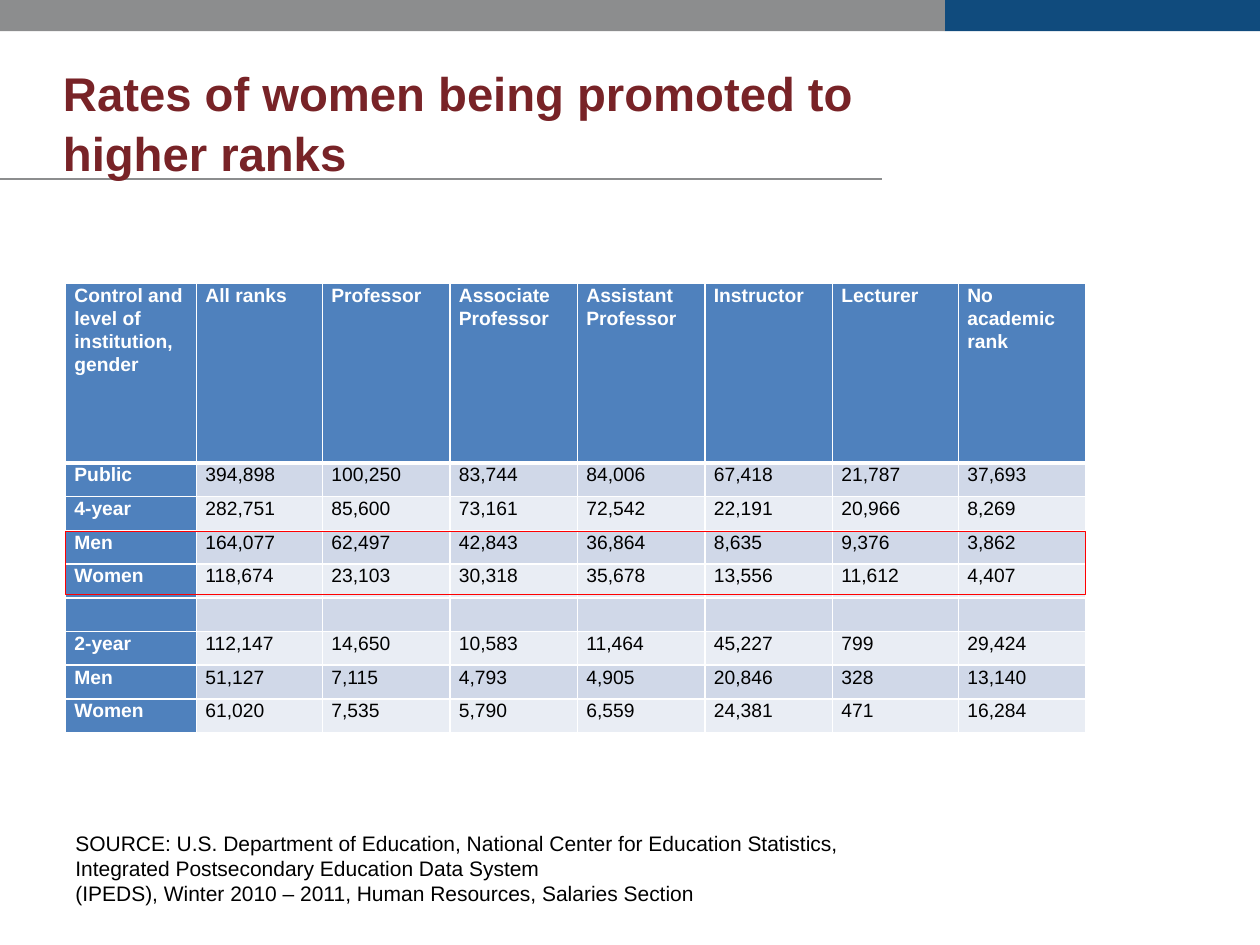
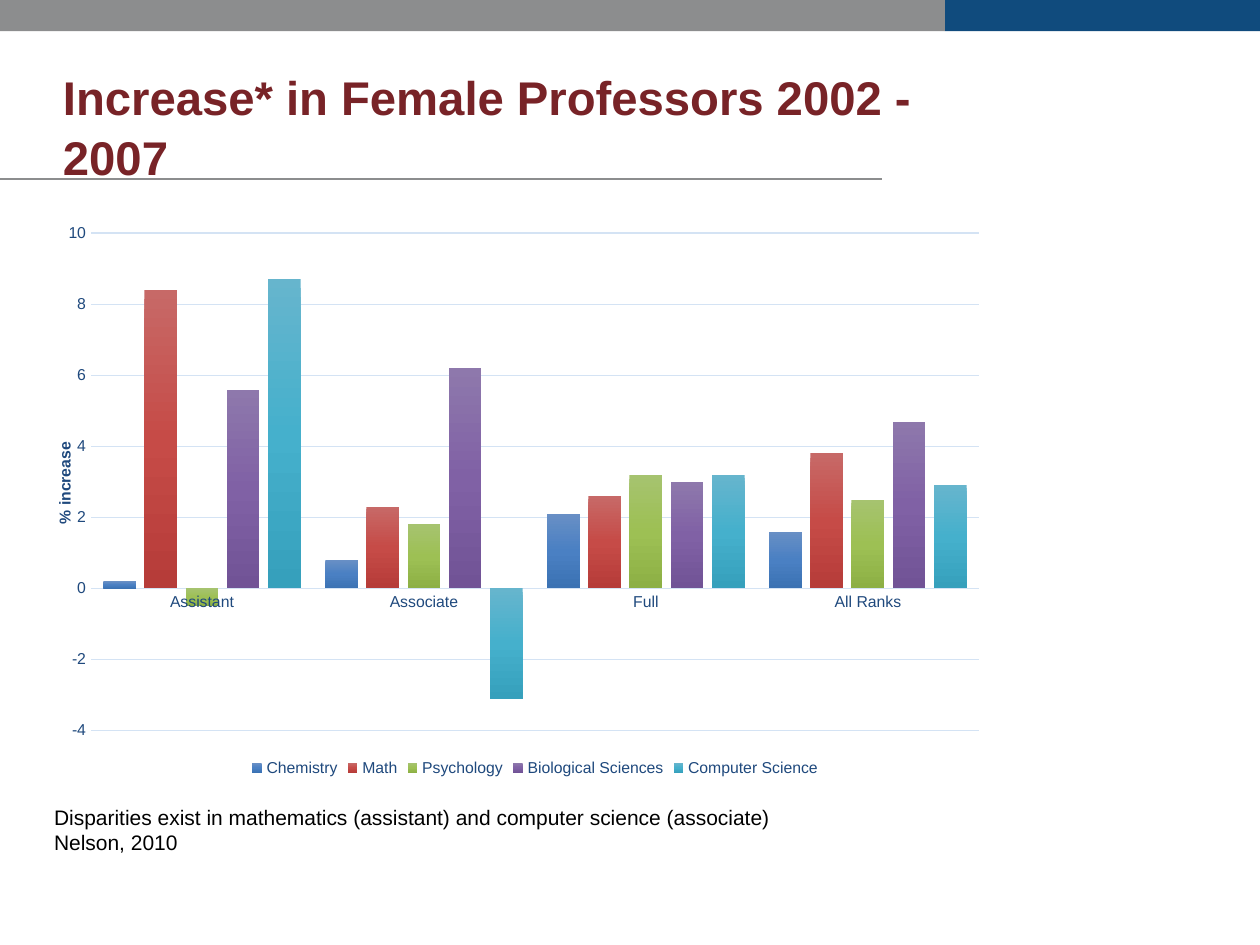
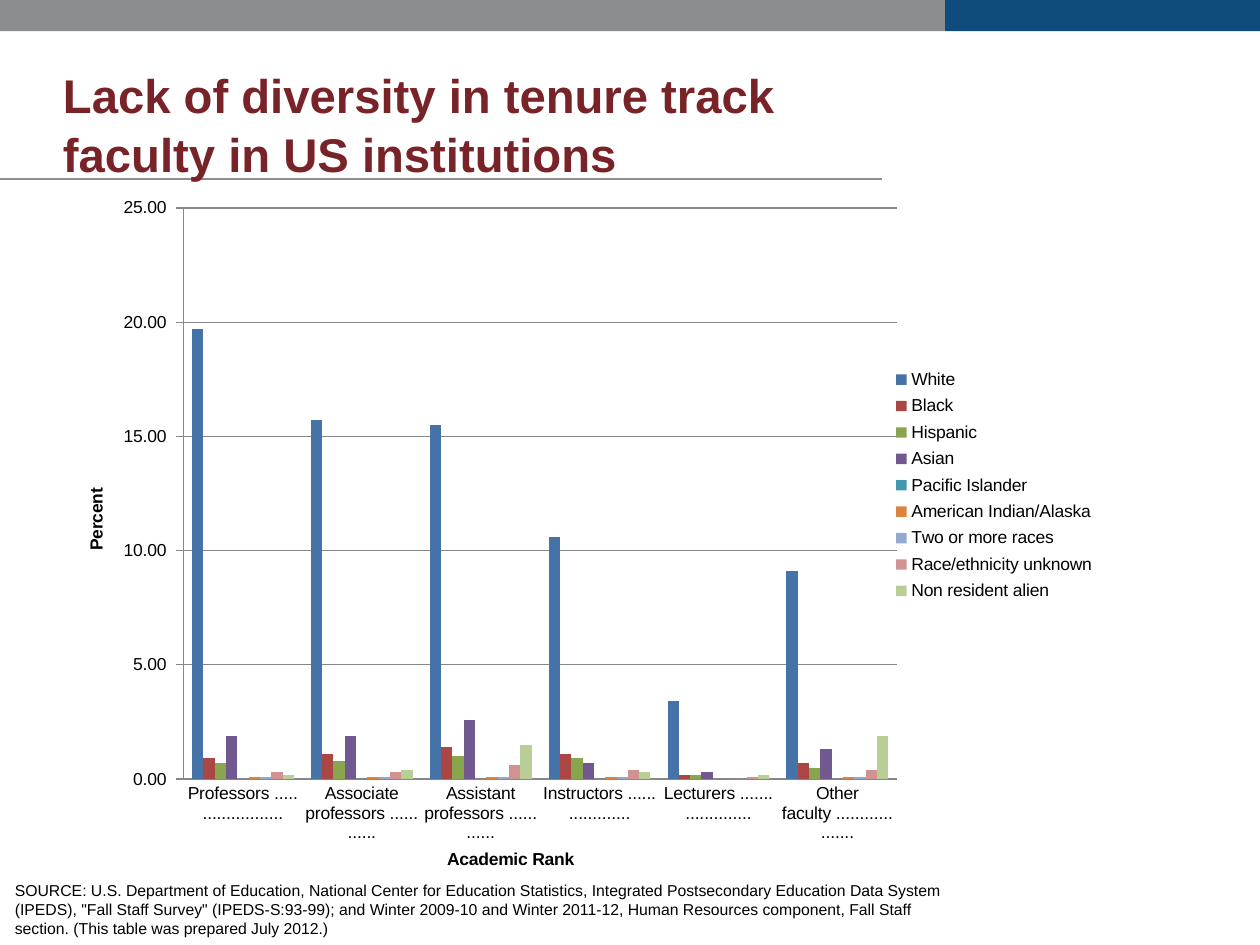
"""Builds three slides on the gender and diversity of university faculty."""
import copy
import dataclasses

import lxml.etree
import pptx
import pptx.chart.data
import pptx.dml.color
import pptx.enum.chart
import pptx.enum.shapes
import pptx.oxml
import pptx.oxml.ns
import pptx.util

Cm = pptx.util.Cm
Pt = pptx.util.Pt
qn = pptx.oxml.ns.qn


@dataclasses.dataclass(frozen=True)
class Theme:
    """Colours and type sizes shared by the slides."""
    font: str = "Arial"
    title: str = "782327"
    text: str = "000000"
    white: str = "FFFFFF"
    grey: str = "8C8D8E"
    navy: str = "104B7D"
    header: str = "4F81BD"
    bands: tuple = ("D0D8E8", "E9EDF4")
    highlight: str = "FF0000"
    title_size: int = 27
    note_size: int = 12
    source_size: int = 9
    table_size: int = 11


@dataclasses.dataclass(frozen=True)
class Box:
    """A region of a slide, in centimetres."""
    left: float
    top: float
    width: float
    height: float

    def lengths(self):
        """Return the position and size as lengths."""
        return [Cm(value) for value in dataclasses.astuple(self)]

    def inner(self, left, top, width, height):
        """Return a region placed relative to this one."""
        return Box(self.left + left, self.top + top, width, height)


@dataclasses.dataclass(frozen=True)
class ChartStyle:
    """The look and scale of a column chart."""
    colours: tuple
    text: str
    size: int
    grid: str
    axis_line: str | None
    tick: object
    scale: tuple
    number_format: str
    gap: int
    overlap: int
    plot: tuple
    value_title: tuple
    legend: object
    category_title: tuple | None = None
    legend_layout: tuple | None = None


THEME = Theme()
PAGE = Box(0, 0, 25.4, 19.05)

RANKS = ["Control and level of institution, gender", "All ranks", "Professor", "Associate Professor",
         "Assistant Professor", "Instructor", "Lecturer", "No academic rank"]
STAFF = [
    ["Public", "394,898", "100,250", "83,744", "84,006", "67,418", "21,787", "37,693"],
    ["4-year", "282,751", "85,600", "73,161", "72,542", "22,191", "20,966", "8,269"],
    ["Men", "164,077", "62,497", "42,843", "36,864", "8,635", "9,376", "3,862"],
    ["Women", "118,674", "23,103", "30,318", "35,678", "13,556", "11,612", "4,407"],
    [""] * 8,
    ["2-year", "112,147", "14,650", "10,583", "11,464", "45,227", "799", "29,424"],
    ["Men", "51,127", "7,115", "4,793", "4,905", "20,846", "328", "13,140"],
    ["Women", "61,020", "7,535", "5,790", "6,559", "24,381", "471", "16,284"],
]
COLUMN_WIDTHS = [2.64, 2.54, 2.57, 2.57, 2.57, 2.57, 2.54, 2.57]
HEADER_HEIGHT, ROW_HEIGHT = 3.61, 0.68

INCREASES = {
    "Chemistry": (0.2, 0.8, 2.1, 1.6),
    "Math": (8.4, 2.3, 2.6, 3.8),
    "Psychology": (-0.5, 1.8, 3.2, 2.5),
    "Biological Sciences": (5.6, 6.2, 3, 4.7),
    "Computer Science": (8.7, -3.1, 3.2, 2.9),
}
INCREASE_STYLE = ChartStyle(
    colours=(("688FC5", "4A80C3", "3B72B3"), ("C76967", "C64B47", "B63C39"),
             ("A6C36F", "9DC054", "8DB045"), ("8E78AC", "8061A5", "715396"),
             ("66B5CD", "45B0CC", "36A0BC")),
    text="1F497D", size=9, grid="D4E3F4", axis_line=None,
    tick=pptx.enum.chart.XL_TICK_MARK.NONE, scale=(-4, 10, 2), number_format="General",
    gap=75, overlap=-25, plot=(0.05, 0.04, 0.9, 0.87),
    value_title=("% increase", 0.01, 0.4), legend=pptx.enum.chart.XL_LEGEND_POSITION.BOTTOM)

DIVERSITY_RANKS = ["Professors ......................", "Associate professors ............",
                   "Assistant professors ............", "Instructors ...................",
                   "Lecturers .....................", "Other faculty ..................."]
DIVERSITY = {
    "White": (19.7, 15.7, 15.5, 10.6, 3.4, 9.1),
    "Black": (0.9, 1.1, 1.4, 1.1, 0.2, 0.7),
    "Hispanic": (0.7, 0.8, 1, 0.9, 0.2, 0.5),
    "Asian": (1.9, 1.9, 2.6, 0.7, 0.3, 1.3),
    "Pacific Islander": (0, 0, 0, 0, 0, 0),
    "American Indian/Alaska": (0.1, 0.1, 0.1, 0.1, 0, 0.1),
    "Two or more races": (0.1, 0.1, 0.1, 0.1, 0, 0.1),
    "Race/ethnicity unknown": (0.3, 0.3, 0.6, 0.4, 0.1, 0.4),
    "Non resident alien": (0.2, 0.4, 1.5, 0.3, 0.2, 1.9),
}
DIVERSITY_STYLE = ChartStyle(
    colours=tuple((colour,) for colour in (
        "4572A7", "AA4643", "89A54E", "71588F", "4198AF", "DB843D", "93A9CF", "D19392", "B9CD96")),
    text=THEME.text, size=10, grid="878787", axis_line="878787",
    tick=pptx.enum.chart.XL_TICK_MARK.OUTSIDE, scale=(0, 25, 5),
    number_format=r"#,##0.00_);\(#,##0.00\)",
    gap=150, overlap=0, plot=(0.19, 0.19, 0.63, 0.7),
    value_title=("Percent", 0.1, 0.53), legend=pptx.enum.chart.XL_LEGEND_POSITION.RIGHT,
    category_title=("Academic Rank", 0.42, 0.97), legend_layout=(0.82, 0.38, 0.18, 0.3))


def rgb(colour):
    """Return a colour object for a hex string."""
    return pptx.dml.color.RGBColor.from_string(colour)


def set_font(font, size, colour, bold=False):
    """Apply the theme font with a size, colour and weight."""
    font.name, font.size, font.bold = THEME.font, Pt(size), bold
    font.color.rgb = rgb(colour)


def add_text(slide, box, lines, size, colour, bold=False, margins=(0.25, 0.13), spacing=1.0):
    """Add a wrapped text box with one paragraph for each line."""
    text_frame = slide.shapes.add_textbox(*box.lengths()).text_frame
    text_frame.word_wrap = True
    text_frame.margin_left = text_frame.margin_right = Cm(margins[0])
    text_frame.margin_top = text_frame.margin_bottom = Cm(margins[1])
    text_frame.text = "\n".join(lines)
    for paragraph in text_frame.paragraphs:
        paragraph.line_spacing = spacing
        for run in paragraph.runs:
            set_font(run.font, size, colour, bold)


def add_rectangle(slide, box, fill=None, line=None):
    """Add a flat rectangle with an optional fill and outline."""
    shape = slide.shapes.add_shape(pptx.enum.shapes.MSO_SHAPE.RECTANGLE, *box.lengths())
    shape.shadow.inherit = False
    if fill:
        shape.fill.solid()
        shape.fill.fore_color.rgb = rgb(fill)
    else:
        shape.fill.background()
    if line:
        shape.line.color.rgb = rgb(line)
        shape.line.width = Pt(0.75)
    else:
        shape.line.fill.background()


def add_frame(slide, page):
    """Draw the top bands and the rule under the title."""
    split = page.width * 0.75
    rule_top = page.top + 3.61
    rule = slide.shapes.add_connector(
        pptx.enum.shapes.MSO_CONNECTOR.STRAIGHT,
        Cm(page.left), Cm(rule_top), Cm(page.left + page.width * 0.7), Cm(rule_top))
    rule.line.color.rgb = rgb(THEME.grey)
    rule.line.width = Pt(0.75)
    lxml.etree.SubElement(rule._element.spPr, qn("a:effectLst"))
    add_rectangle(slide, page.inner(split, 0, page.width - split, 0.63), THEME.navy)
    add_rectangle(slide, page.inner(0, 0, split, 0.63), THEME.grey)


def add_slide(presentation, title, title_box):
    """Add a blank slide with the shared frame and a title."""
    slide = presentation.slides.add_slide(presentation.slide_layouts[6])
    add_frame(slide, PAGE)
    add_text(slide, title_box, [title], THEME.title_size, THEME.title, True, (0, 0), 1.05)
    return slide


def set_borders(cell, top, bottom):
    """Give a cell white borders with the given top and bottom widths."""
    properties = cell._tc.get_or_add_tcPr()
    for side, width in (("L", 1), ("R", 1), ("T", top), ("B", bottom)):
        line = lxml.etree.SubElement(properties, qn(f"a:ln{side}"), w=str(Pt(width)))
        fill = lxml.etree.SubElement(line, qn("a:solidFill"))
        lxml.etree.SubElement(fill, qn("a:srgbClr"), val=THEME.white)


def fill_cell(cell, text, row, column):
    """Write and format one cell of the staff table."""
    heading = row == 0 or column == 0
    set_borders(cell, 3 if row == 1 else 1, 3 if row == 0 else 1)
    cell.fill.solid()
    cell.fill.fore_color.rgb = rgb(THEME.header if heading else THEME.bands[(row - 1) % 2])
    cell.margin_left = cell.margin_right = Cm(0.18)
    cell.margin_top = cell.margin_bottom = 0
    cell.text_frame.text = text
    paragraph = cell.text_frame.paragraphs[0]
    paragraph.line_spacing = 1.07
    for run in paragraph.runs:
        set_font(run.font, THEME.table_size, THEME.white if heading else THEME.text, heading)
    if not text:
        paragraph._p.get_or_add_endParaRPr().set("sz", str(THEME.table_size * 100))


def add_staff_table(slide, box):
    """Add the staff table and outline its four-year gender rows."""
    rows = [RANKS] + STAFF
    table = slide.shapes.add_table(len(rows), len(RANKS), *box.lengths()).table
    for column, width in zip(table.columns, COLUMN_WIDTHS):
        column.width = Cm(width)
    for index, values in enumerate(rows):
        table.rows[index].height = Cm(ROW_HEIGHT if index else HEADER_HEIGHT)
        for column, text in enumerate(values):
            fill_cell(table.cell(index, column), text, index, column)
    outline = box.inner(0, HEADER_HEIGHT + 2 * ROW_HEIGHT + 0.03, box.width, 1.27)
    add_rectangle(slide, outline, line=THEME.highlight)


def set_layout(element, index, position, inner=False):
    """Place a chart part by fractions of the chart area."""
    for old in element.findall(qn("c:layout")):
        element.remove(old)
    layout = lxml.etree.Element(qn("c:layout"))
    manual = lxml.etree.SubElement(layout, qn("c:manualLayout"))
    settings = [("layoutTarget", "inner")] if inner else []
    settings += [("xMode", "edge"), ("yMode", "edge")]
    settings += zip("xywh", position)
    for name, value in settings:
        lxml.etree.SubElement(manual, qn(f"c:{name}"), val=str(value))
    element.insert(index, layout)


def set_axis_title(axis, title, style, rotation):
    """Write, turn and place the title of an axis."""
    text, *position = title
    text_frame = axis.axis_title.text_frame
    text_frame.text = text
    set_font(text_frame.paragraphs[0].runs[0].font, style.size, style.text, True)
    element = axis.axis_title._element
    element.xpath(".//a:bodyPr")[0].set("rot", str(rotation * 60000))
    set_layout(element, 1, position)


def color_series(series, colours):
    """Fill a series with one colour or a downward gradient."""
    series.invert_if_negative = False
    fill = series.format.fill
    if len(colours) == 1:
        fill.solid()
        fill.fore_color.rgb = rgb(colours[0])
        return
    fill.gradient()
    fill.gradient_angle = 270
    stops = series._element.xpath(".//a:gsLst")[0]
    stops.insert(1, copy.deepcopy(stops[0]))
    for index, (stop, colour) in enumerate(zip(fill.gradient_stops, colours)):
        stop.position = index / 2
        stop.color.rgb = rgb(colour)


def format_axes(chart, style):
    """Set the scale, lines and labels of both axes."""
    value_axis, category_axis = chart.value_axis, chart.category_axis
    value_axis.minimum_scale, value_axis.maximum_scale, value_axis.major_unit = style.scale
    value_axis.major_tick_mark = style.tick
    category_axis.major_tick_mark = pptx.enum.chart.XL_TICK_MARK.NONE
    value_axis.tick_labels.number_format = style.number_format
    value_axis.tick_labels.number_format_is_linked = False
    for axis in (value_axis, category_axis):
        set_font(axis.tick_labels.font, style.size, style.text)
    lines = [value_axis.major_gridlines.format.line, category_axis.format.line]
    if style.axis_line:
        lines.append(value_axis.format.line)
    else:
        value_axis.format.line.fill.background()
    for line in lines:
        line.color.rgb = rgb(style.grid)
        line.width = Pt(0.75)
    set_axis_title(value_axis, style.value_title, style, -90)
    if style.category_title:
        set_axis_title(category_axis, style.category_title, style, 0)


def add_column_chart(slide, box, categories, values, style):
    """Add a clustered column chart in the given style."""
    data = pptx.chart.data.CategoryChartData()
    data.categories = categories
    for name, numbers in values.items():
        data.add_series(name, numbers)
    kind = pptx.enum.chart.XL_CHART_TYPE.COLUMN_CLUSTERED
    chart = slide.shapes.add_chart(kind, *box.lengths(), data).chart
    chart.has_title = False
    set_font(chart.font, style.size, style.text)
    plot = chart.plots[0]
    plot.vary_by_categories = False
    plot.gap_width, plot.overlap = style.gap, style.overlap
    for series, colours in zip(plot.series, style.colours):
        color_series(series, colours)
    format_axes(chart, style)
    chart.has_legend = True
    chart.legend.position = style.legend
    chart.legend.include_in_layout = False
    set_font(chart.legend.font, style.size, style.text)
    if style.legend_layout:
        set_layout(chart.legend._element, 1, style.legend_layout)
    chart_element = chart._chartSpace.find(qn("c:chart"))
    set_layout(chart_element.find(qn("c:plotArea")), 0, style.plot, inner=True)
    background = lxml.etree.Element(qn("c:spPr"))
    lxml.etree.SubElement(background, qn("a:noFill"))
    chart_element.addnext(background)


def build_promotion_slide(presentation):
    """Build the slide with the staff table."""
    slide = add_slide(presentation, "Rates of women being promoted to higher ranks",
                      Box(1.27, 1.24, 17.15, 1.7))
    add_text(slide, Box(1.27, 16.61, 17.58, 2.26), [
        "SOURCE: U.S. Department of Education, National Center for Education Statistics, "
        "Integrated Postsecondary Education Data System",
        "(IPEDS), Winter 2010 – 2011, Human Resources, Salaries Section",
    ], THEME.note_size, THEME.text)
    add_staff_table(slide, Box(1.32, 5.72, sum(COLUMN_WIDTHS), HEADER_HEIGHT + 8 * ROW_HEIGHT))


def build_increase_slide(presentation):
    """Build the slide on the increase in female professors."""
    slide = add_slide(presentation, "Increase* in Female Professors 2002 - 2007",
                      Box(1.27, 1.32, 17.78, 1.9))
    add_column_chart(slide, Box(0.84, 4.24, 19.89, 11.53),
                     ["Assistant", "Associate", "Full", "All Ranks"], INCREASES, INCREASE_STYLE)
    add_text(slide, Box(0.84, 16.08, 24.56, 1.88), [
        "Disparities exist in mathematics (assistant) and computer science (associate)",
        "Nelson, 2010",
    ], THEME.note_size, THEME.text)


def build_diversity_slide(presentation):
    """Build the slide on faculty diversity by rank."""
    slide = add_slide(presentation, "Lack of diversity in tenure track faculty in US institutions",
                      Box(1.27, 1.27, 15.88, 0.84))
    add_column_chart(slide, Box(-0.64, 1.07, 22.83, 16.56), DIVERSITY_RANKS, DIVERSITY,
                     DIVERSITY_STYLE)
    add_text(slide, Box(0.05, 17.63, 19.2, 1.42), [
        "SOURCE: U.S. Department of Education, National Center for Education Statistics, "
        "Integrated Postsecondary Education Data System (IPEDS), \"Fall Staff Survey\" "
        "(IPEDS-S:93-99); and Winter 2009-10 and Winter 2011-12, Human Resources component, "
        "Fall Staff section. (This table was prepared July 2012.)",
    ], THEME.source_size, THEME.text)


def main():
    """Build the presentation and save it."""
    presentation = pptx.Presentation()
    presentation.slide_width, presentation.slide_height = Cm(PAGE.width), Cm(PAGE.height)
    build_promotion_slide(presentation)
    build_increase_slide(presentation)
    build_diversity_slide(presentation)
    presentation.save("out.pptx")


if __name__ == "__main__":
    main()
